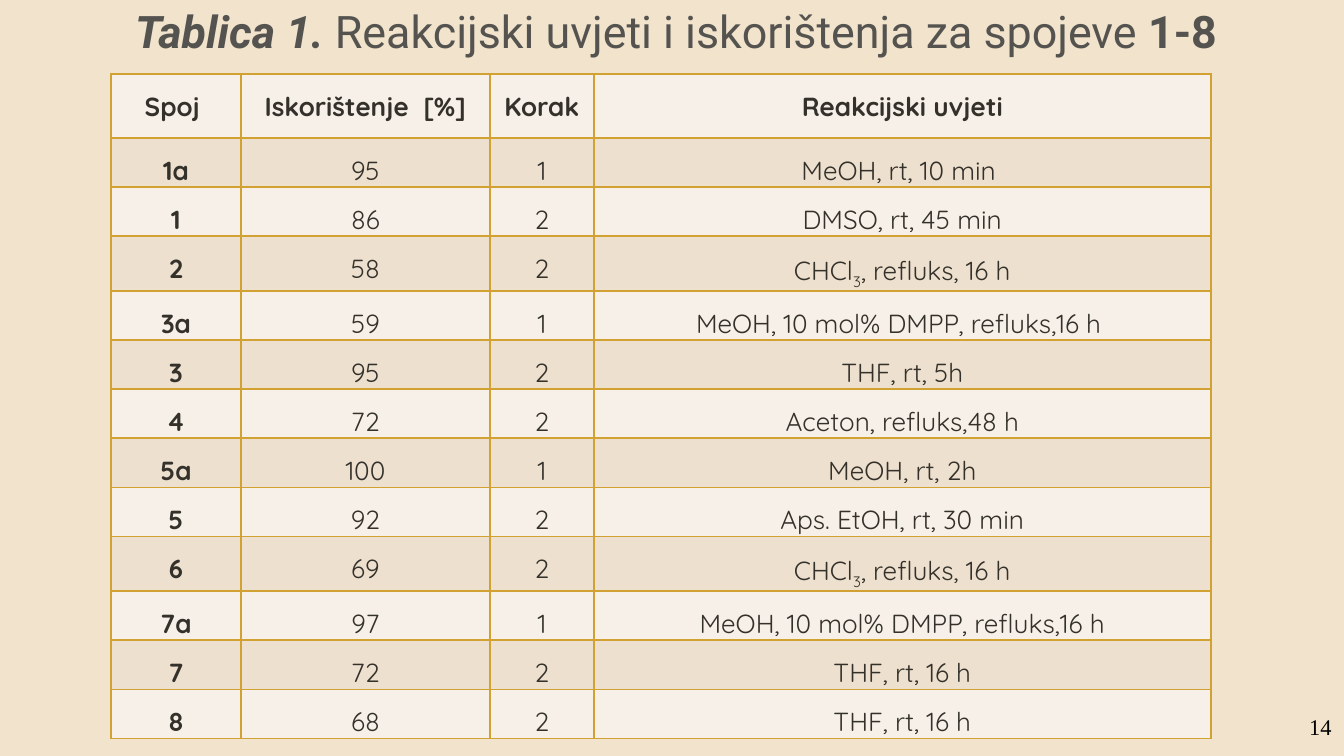
"""Build a slide with a table of reaction conditions and yields."""
import lxml.etree
import pptx
import pptx.dml.color
import pptx.enum.text
import pptx.oxml.ns
import pptx.util

RGBColor = pptx.dml.color.RGBColor
BACKGROUND = RGBColor(0xF1, 0xE3, 0xCC)
LIGHT = RGBColor(0xF7, 0xF0, 0xE8)
DARK = RGBColor(0xEE, 0xE0, 0xCE)
GOLD = RGBColor(0xD1, 0xA2, 0x32)
INK = RGBColor(0x34, 0x31, 0x2B)
TITLE_GREY = RGBColor(0x55, 0x53, 0x4F)
BLACK = RGBColor(0, 0, 0)

TITLE = [
    ("Tablica 1. ", True, True),
    ("Reakcijski uvjeti i iskorištenja za spojeve ", False, False),
    ("1-8", True, False),
]
PAGE_NUMBER = "14"
CHLOROFORM = ("CHCl", "3", ", refluks, 16 h")
ROWS = [
    ("Spoj ", "Iskorištenje  [%]", "Korak", "Reakcijski uvjeti"),
    ("1a", "95", "1", "MeOH, rt, 10 min "),
    ("1", "86", "2", "DMSO, rt, 45 min"),
    ("2", "58", "2", CHLOROFORM),
    ("3a", "59", "1", "MeOH, 10 mol% DMPP, refluks,16 h "),
    ("3", "95", "2", "THF, rt, 5h"),
    ("4", "72", "2", "Aceton, refluks,48 h"),
    ("5a", "100", "1", "MeOH, rt, 2h"),
    ("5", "92", "2", "Aps. EtOH, rt, 30 min"),
    ("6", "69", "2", CHLOROFORM),
    ("7a", "97", "1", "MeOH, 10 mol% DMPP, refluks,16 h"),
    ("7", "72", "2", "THF, rt, 16 h"),
    ("8", "68", "2", "THF, rt, 16 h"),
]
COLUMN_WIDTHS = [130, 249, 104, 617]
HEADER_HEIGHT, ROW_HEIGHT = 64, 47
TABLE_LEFT, TABLE_TOP = 111, 74
CELL_MARGIN = 10
EMU_PER_PX = 914400 / 134.4


def px(n):
    return pptx.util.Emu(round(n * EMU_PER_PX))


def add_run(p, text, name, size, color, bold=False, italic=False):
    r = p.add_run()
    r.text = text
    r.font.name = name
    r.font.size = pptx.util.Pt(size)
    r.font.color.rgb = color
    r.font.bold = bold
    r.font.italic = italic
    return r


def add_textbox(s, *box):
    tf = s.shapes.add_textbox(*map(px, box)).text_frame
    tf.auto_size = pptx.enum.text.MSO_AUTO_SIZE.SHAPE_TO_FIT_TEXT
    return tf


def add_borders(cell):
    tc_pr = cell._tc.get_or_add_tcPr()
    qn = pptx.oxml.ns.qn
    for side in ("a:lnL", "a:lnR", "a:lnT", "a:lnB"):
        line = lxml.etree.SubElement(tc_pr, qn(side), w=str(pptx.util.Pt(1)))
        fill = lxml.etree.SubElement(line, qn("a:solidFill"))
        lxml.etree.SubElement(fill, qn("a:srgbClr"), val=str(GOLD))


def fill_cell(cell, content, bold, color):
    add_borders(cell)
    cell.fill.solid()
    cell.fill.fore_color.rgb = color
    cell.margin_left = cell.margin_right = px(CELL_MARGIN)
    cell.margin_top = cell.margin_bottom = 0
    p = cell.text_frame.paragraphs[0]
    p.alignment = pptx.enum.text.PP_ALIGN.CENTER
    p.line_spacing = 1.5
    parts = (content,) if isinstance(content, str) else content
    for i, part in enumerate(parts):
        r = add_run(p, part, "Quicksand", 14, INK, bold)
        if i == 1:
            r._r.get_or_add_rPr().set("baseline", "-25000")


def add_conditions_table(s):
    heights = [HEADER_HEIGHT] + [ROW_HEIGHT] * (len(ROWS) - 1)
    box = (TABLE_LEFT, TABLE_TOP, sum(COLUMN_WIDTHS), sum(heights))
    table = s.shapes.add_table(len(ROWS), len(COLUMN_WIDTHS), *map(px, box)).table
    for column, width in zip(table.columns, COLUMN_WIDTHS):
        column.width = px(width)
    for i, (row, height) in enumerate(zip(table.rows, heights)):
        row.height = px(height)
        for j, content in enumerate(ROWS[i]):
            fill_cell(table.cell(i, j), content, i == 0 or j == 0, DARK if i % 2 else LIGHT)


def main():
    prs = pptx.Presentation()
    prs.slide_width, prs.slide_height = px(1344), px(756)
    s = prs.slides.add_slide(prs.slide_layouts[6])
    s.background.fill.solid()
    s.background.fill.fore_color.rgb = BACKGROUND

    add_conditions_table(s)

    tf = add_textbox(s, 122, -3, 1122, 67)
    tf.word_wrap = True
    tf.vertical_anchor = pptx.enum.text.MSO_ANCHOR.MIDDLE
    for text, bold, italic in TITLE:
        add_run(tf.paragraphs[0], text, "Roboto", 24, TITLE_GREY, bold, italic)

    tf = add_textbox(s, 1296, 707, 50, 40)
    tf.word_wrap = False
    add_run(tf.paragraphs[0], PAGE_NUMBER, "Times New Roman", 12, BLACK)

    prs.save("out.pptx")


if __name__ == "__main__":
    main()
